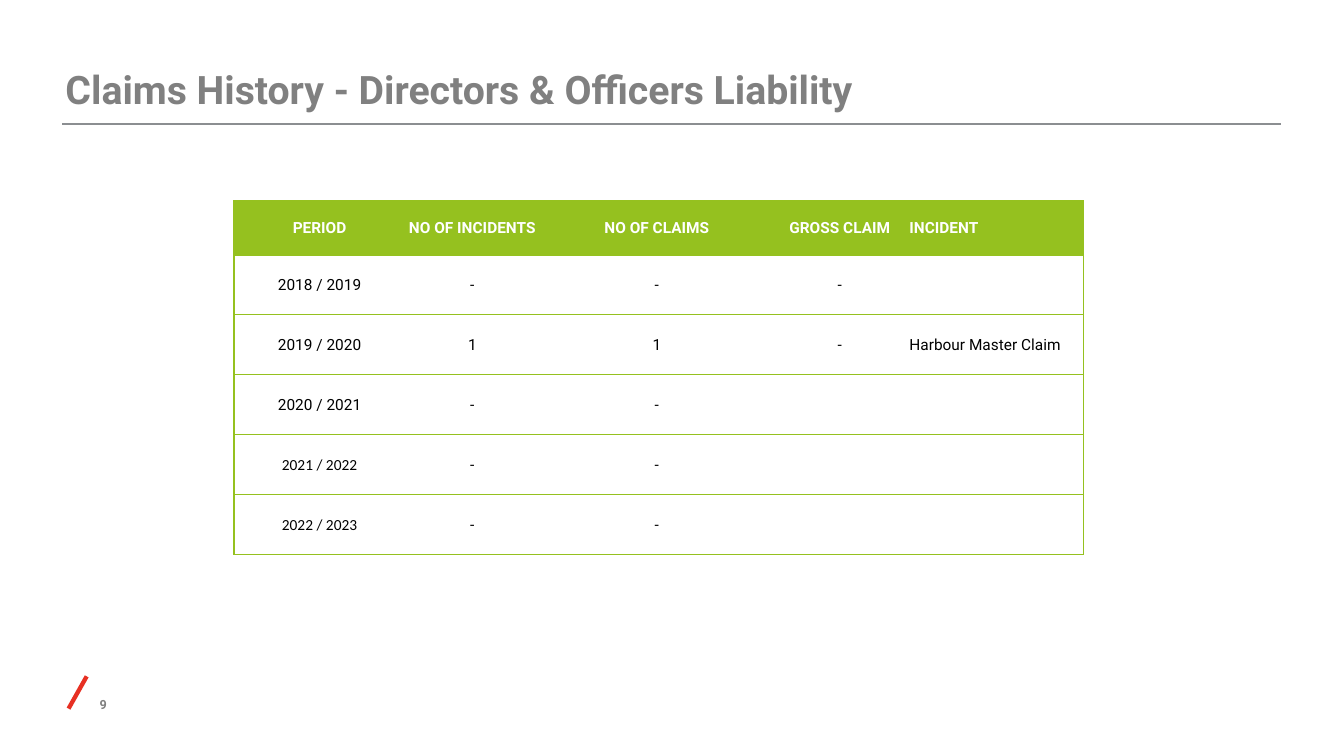
from lxml import etree
from pptx import Presentation
from pptx.dml.color import RGBColor
from pptx.enum.shapes import MSO_CONNECTOR
from pptx.enum.text import MSO_ANCHOR, PP_ALIGN
from pptx.oxml.ns import qn
from pptx.util import Inches, Pt

STRAIGHT = MSO_CONNECTOR.STRAIGHT
BOTTOM, MIDDLE = MSO_ANCHOR.BOTTOM, MSO_ANCHOR.MIDDLE
LEFT, CENTER, RIGHT = PP_ALIGN.LEFT, PP_ALIGN.CENTER, PP_ALIGN.RIGHT

COLORS = {
    "grey": "808080",
    "rule": "8B8E91",
    "red": "E73023",
    "green": "95C11F",
    "white": "FFFFFF",
    "black": "000000",
}


def write(paragraph, text, size, color, align, bold=False, font="Roboto"):
    paragraph.alignment = align
    run = paragraph.add_run()
    run.text = text
    run.font.name = font
    run.font.size = Pt(size)
    run.font.bold = bold
    run.font.color.rgb = RGBColor.from_string(COLORS[color])


def set_borders(cell, colors):
    """Draw a 1 pt border per side, in left, right, top, bottom order; None hides it."""
    properties = cell._tc.get_or_add_tcPr()
    for index, (side, color) in enumerate(zip("LRTB", colors)):
        border = etree.Element(qn(f"a:ln{side}"), w=str(Pt(1)))
        if color:
            fill = etree.SubElement(border, qn("a:solidFill"))
            etree.SubElement(fill, qn("a:srgbClr"), val=COLORS[color])
        else:
            etree.SubElement(border, qn("a:noFill"))
        properties.insert(index, border)


prs = Presentation()
prs.slide_width = Inches(13.33)
prs.slide_height = Inches(7.5)
slide = prs.slides.add_slide(prs.slide_layouts[6])

# Title rule and red slash
for x1, y1, x2, y2, color, width in [
    (0.62, 1.23, 12.71, 1.23, "rule", 1.65),
    (0.68, 7.03, 0.86, 6.71, "red", 3.05),
]:
    stroke = slide.shapes.add_connector(
        STRAIGHT, Inches(x1), Inches(y1), Inches(x2), Inches(y2))
    stroke.line.color.rgb = RGBColor.from_string(COLORS[color])
    stroke.line.width = Pt(width)
    etree.SubElement(stroke._element.spPr, qn("a:effectLst"))

# Title and page number
for text, left, top, width, height, size, align, inset in [
    ("Claims History - Directors & Officers Liability", 0.65, 0.39, 10, 0.72, 28, LEFT, 0),
    ("9", 0.49, 6.88, 0.57, 0.23, 9, RIGHT, 0.05),
]:
    frame = slide.shapes.add_textbox(
        Inches(left), Inches(top), Inches(width), Inches(height)).text_frame
    frame.word_wrap = True
    frame.vertical_anchor = BOTTOM
    frame.margin_left = frame.margin_top = frame.margin_right = 0
    frame.margin_bottom = Inches(inset)
    write(frame.paragraphs[0], text, size, "grey", align, bold=True)

# Claims table
claims = [
    ["PERIOD", "NO OF INCIDENTS", "NO OF CLAIMS", "GROSS CLAIM", "INCIDENT"],
    ["2018 / 2019", "-", "-", "-", ""],
    ["2019 / 2020", "1", "1", "-", "Harbour Master Claim"],
    ["2020 / 2021", "-", "-", "", ""],
    ["2021 / 2022", "-", "-", "", ""],
    ["2022 / 2023", "-", "-", "", ""],
]
column_widths = [1.7, 1.33, 2.33, 1.3, 1.77]
calibri_periods = ("2021 / 2022", "2022 / 2023")
last = len(column_widths) - 1

table = slide.shapes.add_table(
    len(claims), len(column_widths),
    Inches(2.32), Inches(1.99), Inches(8.43), Inches(3.51)).table
table.horz_banding = False
for column, width in zip(table.columns, column_widths):
    column.width = Inches(width)

for r, record in enumerate(claims):
    header = r == 0
    table.rows[r].height = Inches(0.54) if header else Inches(2.97 / 5)
    for c, text in enumerate(record):
        cell = table.cell(r, c)
        cell.fill.solid()
        cell.fill.fore_color.rgb = RGBColor.from_string(COLORS["green" if header else "white"])
        cell.vertical_anchor = MIDDLE
        cell.margin_left = Inches(0.04 if c == last else 0.01)
        cell.margin_right = cell.margin_top = Inches(0.01)
        cell.margin_bottom = 0
        set_borders(cell, ["green" if c == 0 else None,
                           "green" if c == last else None, "green", "green"])
        if text:
            write(cell.text_frame.paragraphs[0], text, 11,
                  "white" if header else "black",
                  LEFT if c == last else CENTER, bold=header,
                  font="Calibri" if text in calibri_periods else "Roboto")

prs.save("out.pptx")
